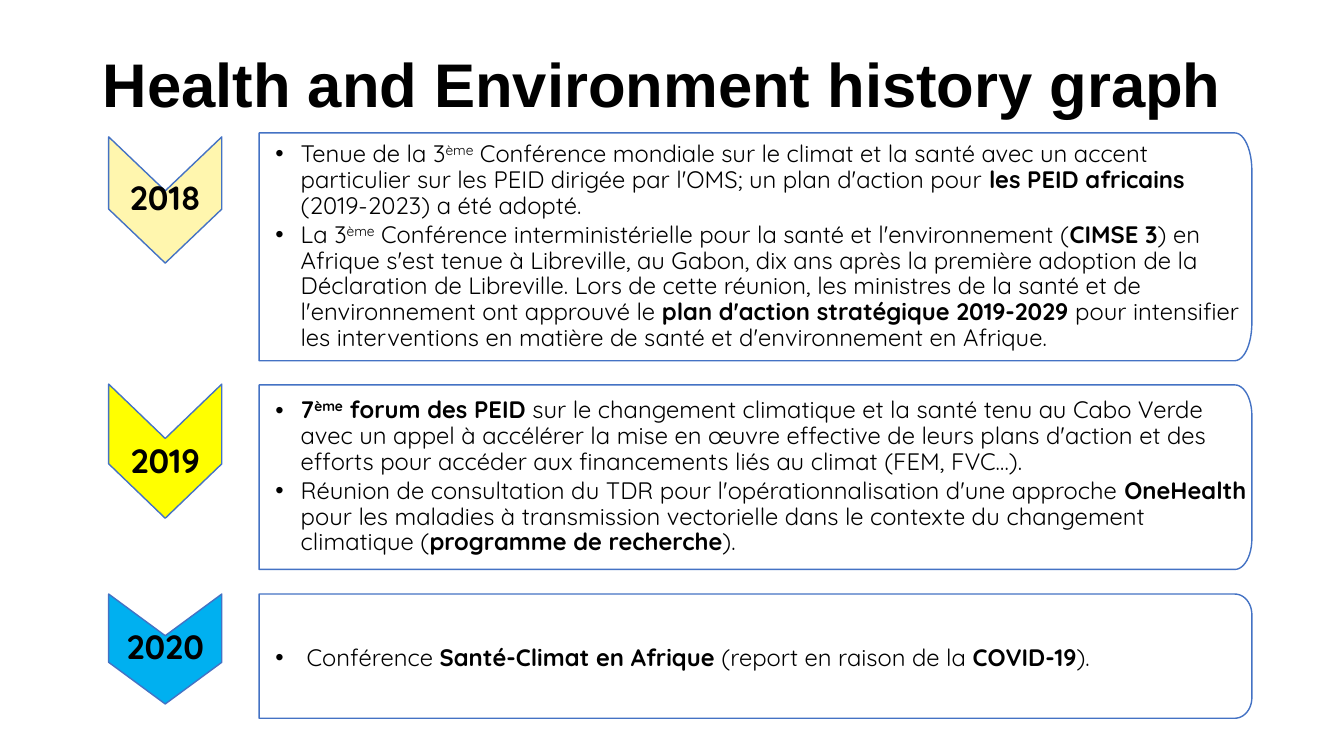
from math import cos, pi, sin

from lxml.etree import SubElement
from pptx import Presentation
from pptx.dml.color import RGBColor
from pptx.enum.text import MSO_ANCHOR, PP_ALIGN
from pptx.oxml.ns import qn
from pptx.util import Cm, Pt

TITLE = "Health and Environment history graph"
FONT = "Quicksand"
BLUE = "4472C4"

# In the texts, * switches bold and ^ switches superscript.
ROWS = [
    {
        "year": "2018", "fill": "FFF6AE", "drop": 0,
        "arrow": (3.45, 3.18, 1.36), "panel": (3.35, 5.74),
        "indent": 0.64, "lines": 0.9, "after": 2.5,
        "items": [
            "Tenue de la 3^ème^ Conférence mondiale sur le climat et la santé "
            "avec un accent particulier sur les PEID dirigée par l'OMS; un plan "
            "d'action pour *les PEID africains *(2019-2023) a été adopté.",
            "La 3^ème^ Conférence interministérielle pour la santé et "
            "l'environnement (*CIMSE 3*) en Afrique s'est tenue à Libreville, au "
            "Gabon, dix ans après la première adoption de la Déclaration de "
            "Libreville. Lors de cette réunion, les ministres de la santé et de "
            "l'environnement ont approuvé le *plan d'action stratégique "
            "2019-2029 *pour intensifier les interventions en matière de santé "
            "et d'environnement en Afrique.",
        ],
    },
    {
        "year": "2019", "fill": "FFFF00", "drop": 0.6,
        "arrow": (9.68, 3.38, 1.37), "panel": (9.7, 4.65),
        "indent": 0.64, "lines": 0.9, "after": 2.5,
        "items": [
            "*7^ème^ forum des PEID *sur le changement climatique et la santé "
            "tenu au Cabo Verde avec un appel à accélérer la mise en œuvre "
            "effective de leurs plans d'action et des efforts pour accéder aux "
            "financements liés au climat (FEM, FVC…).",
            "Réunion de consultation du TDR pour l'opérationnalisation d'une "
            "approche *OneHealth* pour les maladies à transmission vectorielle "
            "dans le contexte du changement climatique (*programme de "
            "recherche*).",
        ],
    },
    {
        "year": "2020", "fill": "00B0F0", "drop": 0,
        "arrow": (14.97, 2.77, 1.05), "panel": (14.97, 3.13),
        "indent": 0.79, "lines": 1.07, "after": 8,
        "items": [
            "Conférence *Santé-Climat en Afrique *(report en raison de la "
            "*COVID-19*).",
        ],
    },
]
ARROW_X, ARROW_W = 2.74, 2.85
PANEL_X, PANEL_W, CURVE_W = 6.53, 25.02, 0.43


def color(code):
    return RGBColor.from_string(code)


def split(text):
    """Yield (piece, bold, superscript) from marked text."""
    for i, part in enumerate(text.split("*")):
        for j, piece in enumerate(part.split("^")):
            if piece:
                yield piece, i % 2 == 1, j % 2 == 1


def write(frame, items, size=17, font=FONT, bold=False, align=PP_ALIGN.LEFT,
          lines=0.9, after=0, indent=0, margins=(0.25, 0.13, 0.25, 0.13)):
    frame.word_wrap = True
    frame.vertical_anchor = MSO_ANCHOR.MIDDLE
    (frame.margin_left, frame.margin_top,
     frame.margin_right, frame.margin_bottom) = map(Cm, margins)
    for i, item in enumerate(items):
        para = frame.add_paragraph() if i else frame.paragraphs[0]
        para.alignment = align
        para.line_spacing = lines
        para.space_before, para.space_after = Pt(0), Pt(after)
        if indent:
            props = para._p.get_or_add_pPr()
            props.set("marL", str(Cm(indent)))
            props.set("indent", str(-Cm(indent)))
            SubElement(props, qn("a:buFont"), typeface="Arial")
            SubElement(props, qn("a:buChar"), char="•")
        for piece, strong, raised in split(item):
            run = para.add_run()
            run.text = piece
            run.font.size = Pt(size)
            run.font.name = font
            run.font.bold = bold or strong
            run.font.color.rgb = color("000000")
            if raised:
                run._r.get_or_add_rPr().set("baseline", "30000")


def outline(slide, points, fill, alpha=None):
    spots = [(Cm(x), Cm(y)) for x, y in points]
    form = slide.shapes.build_freeform(*spots[0])
    form.add_line_segments(spots[1:], close=True)
    shape = form.convert_to_shape()
    shape.shadow.inherit = False
    shape.fill.solid()
    shape.fill.fore_color.rgb = color(fill)
    if alpha:
        tint = shape._element.spPr.find(".//" + qn("a:srgbClr"))
        SubElement(tint, qn("a:alpha"), val=str(alpha * 1000))
    shape.line.color.rgb = color(BLUE)
    shape.line.width = Pt(1)
    return shape


def panel(top, height, steps=12):
    """Points of a box whose two right corners are rounded."""
    right, low, rise = PANEL_X + PANEL_W, top + height, height / 6
    turns = [pi / 2 * i / steps for i in range(steps + 1)]
    bends = [(CURVE_W * (1 - sin(t)), rise * (1 - cos(t))) for t in turns]
    upper = [(right - dx, top + dy) for dx, dy in bends]
    lower = [(right - dx, low - dy) for dx, dy in reversed(bends)]
    return [(PANEL_X, top)] + upper + lower + [(PANEL_X, low)]


def arrow(top, height, notch):
    """Points of a chevron that points down."""
    mid, right, low = ARROW_X + ARROW_W / 2, ARROW_X + ARROW_W, top + height
    return [(right, top), (right, low - notch), (mid, low),
            (ARROW_X, low - notch), (ARROW_X, top), (mid, top + notch)]


def main():
    deck = Presentation()
    deck.slide_width, deck.slide_height = Cm(33.87), Cm(19.05)
    slide = deck.slides.add_slide(deck.slide_layouts[5])
    title = slide.shapes.title
    title.left, title.top = Cm(2.34), Cm(0.36)
    title.width, title.height = Cm(29.21), Cm(3.68)
    write(title.text_frame, [TITLE], size=44, font="Arial", bold=True)

    for row in ROWS:
        box = outline(slide, panel(*row["panel"]), "FFFFFF", alpha=90)
        write(box.text_frame, row["items"], lines=row["lines"],
              after=row["after"], indent=row["indent"],
              margins=(0.41, 0.13, 0.13, 0.13))
    for row in ROWS:
        mark = outline(slide, arrow(*row["arrow"]), row["fill"])
        write(mark.text_frame, [row["year"]], size=24, bold=True,
              align=PP_ALIGN.CENTER, margins=(0.03, row["drop"], 0.03, 0))
    deck.save("out.pptx")


if __name__ == "__main__":
    main()
